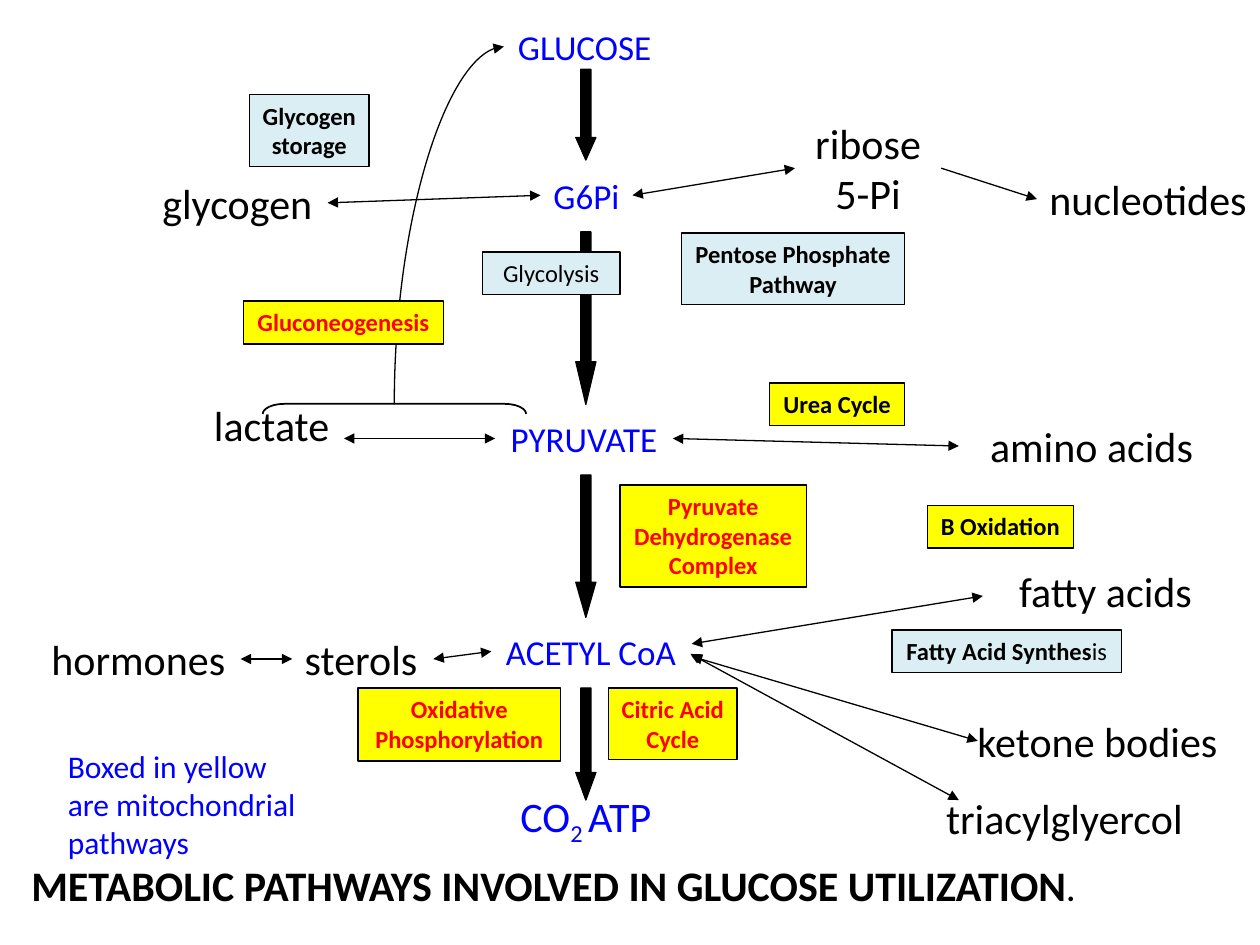
from pptx import Presentation, util as u
from pptx.dml.color import RGBColor
from pptx.enum import shapes, text
from pptx.oxml.ns import qn
from lxml import etree

PX = 9144  # 100 px to the inch
HUE = {"black": "000000", "blue": "0000FF", "red": "FF0000",
       "yellow": "FFFF00", "pale": "DBEEF4"}
LEFT, RIGHT = 1, 3

# text, (x, y, w, h)
STAGES = [
    ("GLUCOSE", (400, 15, 128, 44)),
    ("G6Pi", (429, 133, 73, 44)),
    ("PYRUVATE", (393, 326, 141, 44)),
    ("ACETYL CoA", (390, 495, 158, 44)),
]
LABELS = [
    ("glycogen", (119, 136, 141, 50)),
    ("nucleotides", (823, 133, 178, 50)),
    ("lactate", (160, 312, 114, 50)),
    ("amino acids", (776, 329, 183, 50)),
    ("fatty acids", (799, 444, 160, 50)),
    ("ketone bodies", (766, 563, 214, 50)),
    ("sterols", (232, 498, 112, 50)),
    ("hormones", (31, 498, 160, 50)),
    ("triacylglyercol", (741, 624, 211, 50)),
]
# top, height, head length as a share of the width
ARROWS = [(55, 72, 1.121), (184, 137, 2.118), (377, 113, 1.745), (546, 89, 1.371)]
# an end is a point, or a label with one of its sides
LINKS = [
    (("G6Pi", LEFT), ("glycogen", RIGHT)),
    (("G6Pi", RIGHT), ("ribose", LEFT)),
    ((273, 348), ("PYRUVATE", LEFT)),
    (("PYRUVATE", RIGHT), (761, 354)),
    ((549, 511), (780, 473)),
    ((549, 521), (776, 588)),
    ((548, 519), (761, 635)),
    (("sterols", RIGHT), ("ACETYL CoA", LEFT)),
    (("hormones", RIGHT), ("sterols", LEFT)),
]
# lines, (x, y, w, h), fill, ink
PATHWAYS = [
    (["Glycogen", "storage"], (198, 75, 95, 57), "pale", "black"),
    (["Gluconeogenesis"], (193, 239, 159, 34), "yellow", "red"),
    (["Pentose Phosphate", "Pathway"], (541, 185, 177, 57), "pale", "black"),
    (["Urea Cycle"], (611, 304, 107, 34), "yellow", "black"),
    (["Pyruvate", "Dehydrogenase", "Complex"], (492, 385, 148, 81), "yellow", "red"),
    (["B Oxidation"], (736, 401, 116, 34), "yellow", "black"),
    (["Oxidative", "Phosphorylation"], (284, 546, 161, 58), "yellow", "red"),
    (["Citric Acid", "Cycle"], (483, 546, 102, 57), "yellow", "red"),
]


def px(*nums):
    return [u.Emu(n * PX) for n in nums]


def rgb(name):
    return RGBColor.from_string(HUE[name])


def add_run(para, words, size, ink="black", bold=False, base=0):
    run = para.add_run()
    run.text = words
    font = run.font
    font.name, font.size, font.bold = "Calibri", u.Pt(size), bold
    font.color.rgb = rgb(ink)
    if base:
        run._r.get_or_add_rPr().set("baseline", str(base))


def set_frame(shape, count=1, center=True, mid=False, wrap=False):
    """Lay out the text frame and return its empty paragraphs."""
    frame = shape.text_frame
    frame.word_wrap = wrap
    frame.auto_size = text.MSO_AUTO_SIZE.SHAPE_TO_FIT_TEXT
    frame.vertical_anchor = text.MSO_ANCHOR.MIDDLE if mid else text.MSO_ANCHOR.TOP
    paras = [frame.paragraphs[0]] + [frame.add_paragraph() for _ in range(count - 1)]
    for para in paras:
        para.alignment = text.PP_ALIGN.CENTER if center else text.PP_ALIGN.LEFT
    return paras


def add_label(slide, lines, box, size, ink="black", **look):
    shape = slide.shapes.add_textbox(*px(*box))
    for para, words in zip(set_frame(shape, len(lines), **look), lines):
        add_run(para, words, size, ink)
    return shape


def add_form(slide, kind, box, fill=None, width=0.75):
    shape = slide.shapes.add_shape(kind, *px(*box))
    shape.shadow.inherit = False
    if fill:
        shape.fill.solid()
        shape.fill.fore_color.rgb = rgb(fill)
    else:
        shape.fill.background()
    shape.line.color.rgb = rgb("black")
    shape.line.width = u.Pt(width)
    return shape


def add_box(slide, lines, box, fill, ink="black", bold=True):
    shape = add_form(slide, shapes.MSO_SHAPE.RECTANGLE, box, fill)
    paras = set_frame(shape, len(lines))
    for para, words in zip(paras, lines):
        add_run(para, words, 14, ink, bold)
    return paras


def add_line(slide, start, end, kind=shapes.MSO_CONNECTOR.STRAIGHT,
             ends=("headEnd", "tailEnd")):
    line = slide.shapes.add_connector(kind, *px(*start, *end))
    line.line.color.rgb = rgb("black")
    line.line.width = u.Pt(0.75)
    pen = line.line._get_or_add_ln()
    for tag in ends:
        etree.SubElement(pen, qn("a:" + tag), type="triangle")
    etree.SubElement(line._element.spPr, qn("a:effectLst"))
    return line


def add_link(slide, nodes, start, end, **look):
    """Draw a line, joined to a label wherever an end names one."""
    joins = [isinstance(tip[0], str) for tip in (start, end)]
    spots = [(0, 0) if join else tip for join, tip in zip(joins, (start, end))]
    line = add_line(slide, *spots, **look)
    if joins[0]:
        line.begin_connect(nodes[start[0]], start[1])
    if joins[1]:
        line.end_connect(nodes[end[0]], end[1])


def add_return(slide):
    """Bracket over lactate and pyruvate, with the curve back to glucose."""
    brace = add_form(slide, shapes.MSO_SHAPE.LEFT_BRACKET, (309, 220, 8, 209), width=1)
    brace.adjustments[0] = 2.137
    brace.rotation = 90
    curve = add_line(slide, (400, 37), (313, 321), shapes.MSO_CONNECTOR.CURVE, ("headEnd",))
    curve._element.spPr.find(qn("a:prstGeom")).set("prst", "curvedConnector2")


def main():
    deck = Presentation()
    deck.slide_width, deck.slide_height = px(1000, 750)
    slide = deck.slides.add_slide(deck.slide_layouts[6])

    nodes = {}
    for words, box in STAGES:
        nodes[words] = add_label(slide, [words], box, 20, "blue", mid=True)
    for words, box in LABELS:
        nodes[words] = add_label(slide, [words], box, 24, center=False)
    nodes["ribose"] = add_label(slide, ["ribose", "5-Pi"], (631, 88, 116, 91), 24, wrap=True)

    yields = slide.shapes.add_textbox(*px(400, 625, 130, 50))
    para = set_frame(yields, mid=True)[0]
    for words, base in (("CO", 0), ("2 ", -25000), ("ATP", 0)):
        add_run(para, words, 24, "blue", base=base)

    for top, high, head in ARROWS:
        arrow = add_form(slide, shapes.MSO_SHAPE.DOWN_ARROW, (457, top, 16, high), "black")
        arrow.adjustments[0], arrow.adjustments[1] = 0.5, head
    for start, end in LINKS:
        add_link(slide, nodes, start, end)
    add_link(slide, nodes, ("ribose", RIGHT), ("nucleotides", LEFT), ends=("tailEnd",))
    add_return(slide)

    for item in PATHWAYS:
        add_box(slide, *item)
    add_box(slide, ["Glycolysis"], (383, 200, 109, 34), "pale", bold=False)
    paras = add_box(slide, ["Fatty Acid Synthes"], (708, 500, 182, 34), "pale")
    add_run(paras[0], "is", 14)

    title = slide.shapes.add_textbox(*px(15, 677, 874, 50))
    para = set_frame(title, center=False, wrap=True)[0]
    add_run(para, "METABOLIC PATHWAYS INVOLVED IN GLUCOSE UTILIZATION", 24, bold=True)
    add_run(para, ".", 18, bold=True)
    add_label(slide, ["Boxed in yellow are mitochondrial pathways"],
              (44, 588, 216, 101), 18, "blue", center=False, wrap=True)
    deck.save("out.pptx")


if __name__ == "__main__":
    main()
